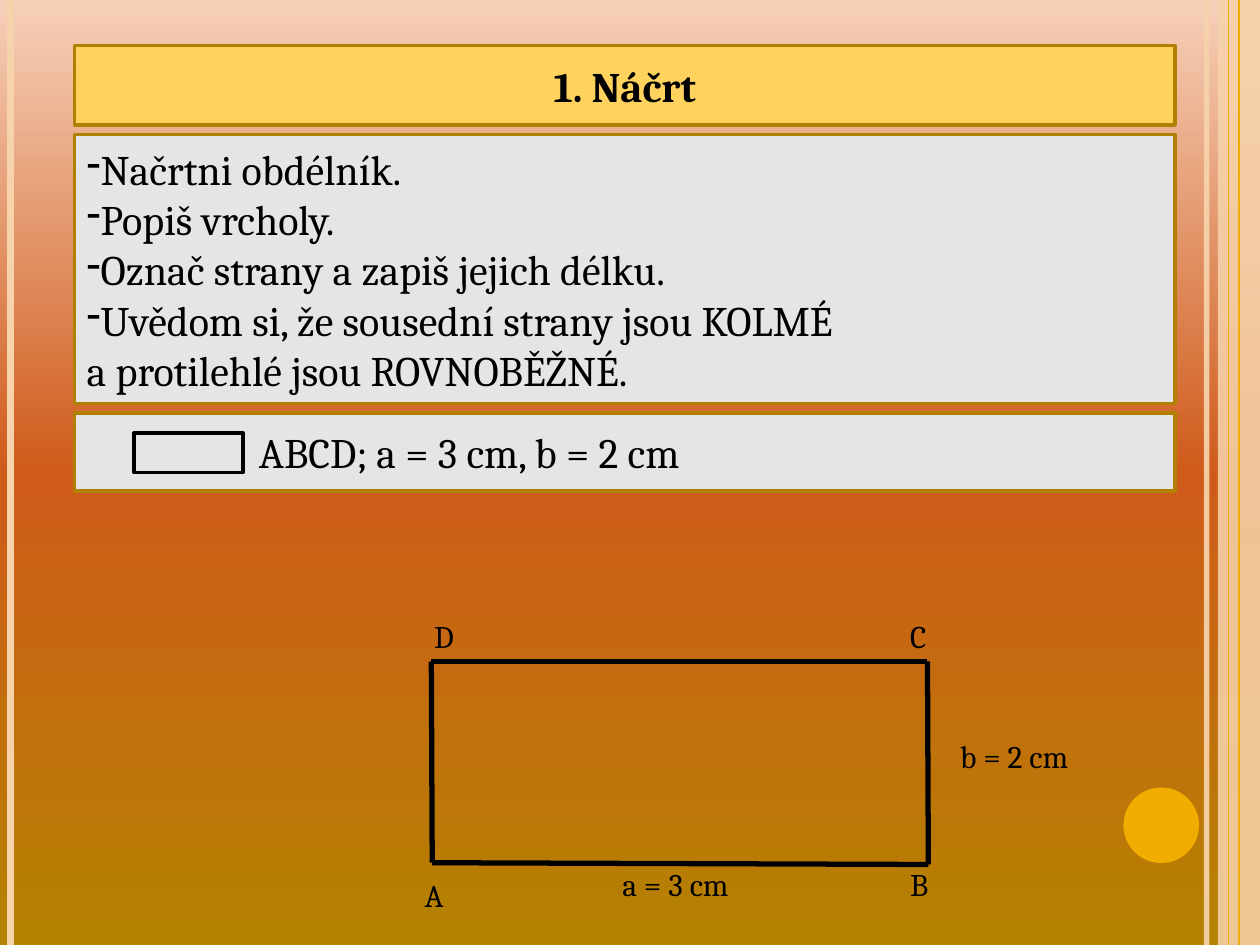
from copy import deepcopy

from pptx import Presentation
from pptx.dml.color import RGBColor
from pptx.enum.shapes import MSO_CONNECTOR as CONN, MSO_SHAPE as SHAPE
from pptx.enum.text import MSO_ANCHOR as ANCHOR, MSO_AUTO_SIZE as AUTO, PP_ALIGN as ALIGN
from pptx.oxml.ns import qn
from pptx.oxml.xmlchemy import OxmlElement
from pptx.util import Pt

W, H = 720, 540
BLACK, GOLD, GREY, BORDER, PEACH = "000000", "F0AD00", "E5E5E6", "B28000", "F6D3AB"


def write(sp, text, size=24, bold=False, align=ALIGN.LEFT, anchor=ANCHOR.MIDDLE, left=7.2):
    """Fill a shape with one paragraph per line of text."""
    tf = sp.text_frame
    tf.word_wrap, tf.auto_size, tf.vertical_anchor = True, AUTO.NONE, anchor
    tf.margin_left = Pt(left)
    tf.text = text
    for p in tf.paragraphs:
        p.alignment = align
        font = p.runs[0].font
        font.name, font.size, font.bold = "Cambria", Pt(size), bold
        font.color.rgb = RGBColor.from_string(BLACK)


def style(sp, fill=None, line=None, width=2, alpha=100):
    """Set fill and line of a shape, or the line of a connector."""
    if hasattr(sp, "fill"):
        sp.shadow.inherit = False
        if fill:
            sp.fill.solid()
            sp.fill.fore_color.rgb = RGBColor.from_string(fill)
        else:
            sp.fill.background()
    else:
        sp._element.spPr.append(OxmlElement("a:effectLst"))
    if line:
        sp.line.color.rgb = RGBColor.from_string(line)
        sp.line.width = Pt(width)
    else:
        sp.line.fill.background()
    if alpha < 100:
        a = OxmlElement("a:alpha")
        a.set("val", str(alpha * 1000))
        sp._element.spPr.find(".//" + qn("a:srgbClr")).append(a)


prs = Presentation()
prs.slide_width, prs.slide_height = Pt(W), Pt(H)
s = prs.slides.add_slide(prs.slide_layouts[5])

# Background gradient, top to bottom
bg = s.background.fill
bg.gradient()
bg.gradient_angle = 270
stops = s._element.find(".//" + qn("a:gsLst"))
stops.append(deepcopy(stops[-1]))
for stop, pos, color in zip(bg.gradient_stops, (0, 0.5, 1), ("F6CFB9", "CF5B1B", "B48200")):
    stop.position = pos
    stop.color.rgb = RGBColor.from_string(color)

# Edge decoration
band = s.shapes.add_shape(SHAPE.RECTANGLE, Pt(696), 0, Pt(24), Pt(H))
style(band, fill=PEACH, alpha=87)
for x, color, width, alpha in [(689.5, PEACH, 3, 93), (6, PEACH, 4.5, 100),
                               (708, GOLD, 1.5, 100), (702, GOLD, 0.75, 100)]:
    edge = s.shapes.add_connector(CONN.STRAIGHT, Pt(x), 0, Pt(x), Pt(H))
    style(edge, line=color, width=width, alpha=alpha)
dot = s.shapes.add_shape(SHAPE.OVAL, Pt(642), Pt(450), Pt(43.2), Pt(43.2))
style(dot, fill=GOLD)

# Title and panels
title = s.shapes.title
title.left, title.top, title.width, title.height = Pt(42.5), Pt(26), Pt(629), Pt(45.5)
title.fill.solid()
title.fill.fore_color.rgb = RGBColor.from_string("FFD25D")
title.line.color.rgb = RGBColor.from_string(BORDER)
title.line.width = Pt(2)
write(title, "1. Náčrt", bold=True, align=ALIGN.CENTER)

steps = """Načrtni obdélník.
Popiš vrcholy.
Označ strany a zapiš jejich délku.
Uvědom si, že sousední strany jsou KOLMÉ
a protilehlé jsou ROVNOBĚŽNÉ."""
panels = []
for y, h, text, left in [(77, 153.5, steps, 7.2),
                         (236, 44.5, "ABCD; a = 3 cm, b = 2 cm", 105.5)]:
    panel = s.shapes.add_shape(SHAPE.RECTANGLE, Pt(42.5), Pt(y), Pt(629), Pt(h))
    style(panel, fill=GREY, line=BORDER)
    write(panel, text, left=left)
    panels.append(panel)
for p in panels[0].text_frame.paragraphs[:-1]:
    bullet = OxmlElement("a:buChar")
    bullet.set("char", "-")
    p._p.get_or_add_pPr().append(bullet)

symbol = s.shapes.add_shape(SHAPE.RECTANGLE, Pt(76.5), Pt(247.5), Pt(62.5), Pt(22.5))
style(symbol, line=BLACK)

# Sketch of rectangle ABCD
A, B, C, D = (247, 493), (530.5, 494), (530, 378), (246.5, 378)
for start, end in [(D, C), (A, B), (D, A), (C, B)]:
    side = s.shapes.add_connector(CONN.STRAIGHT, *map(Pt, start + end))
    style(side, line=BLACK, width=3)

for text, x, y, w in [("b = 2 cm", 541.5, 417.5, 107), ("a = 3 cm", 348.5, 491, 181),
                      ("D", 241, 349, 24), ("C", 513, 349, 24),
                      ("B", 513, 491, 34), ("A", 235.5, 497, 34)]:
    label = s.shapes.add_textbox(Pt(x), Pt(y), Pt(w), Pt(29))
    write(label, text, size=18, anchor=ANCHOR.TOP)

prs.save("out.pptx")
